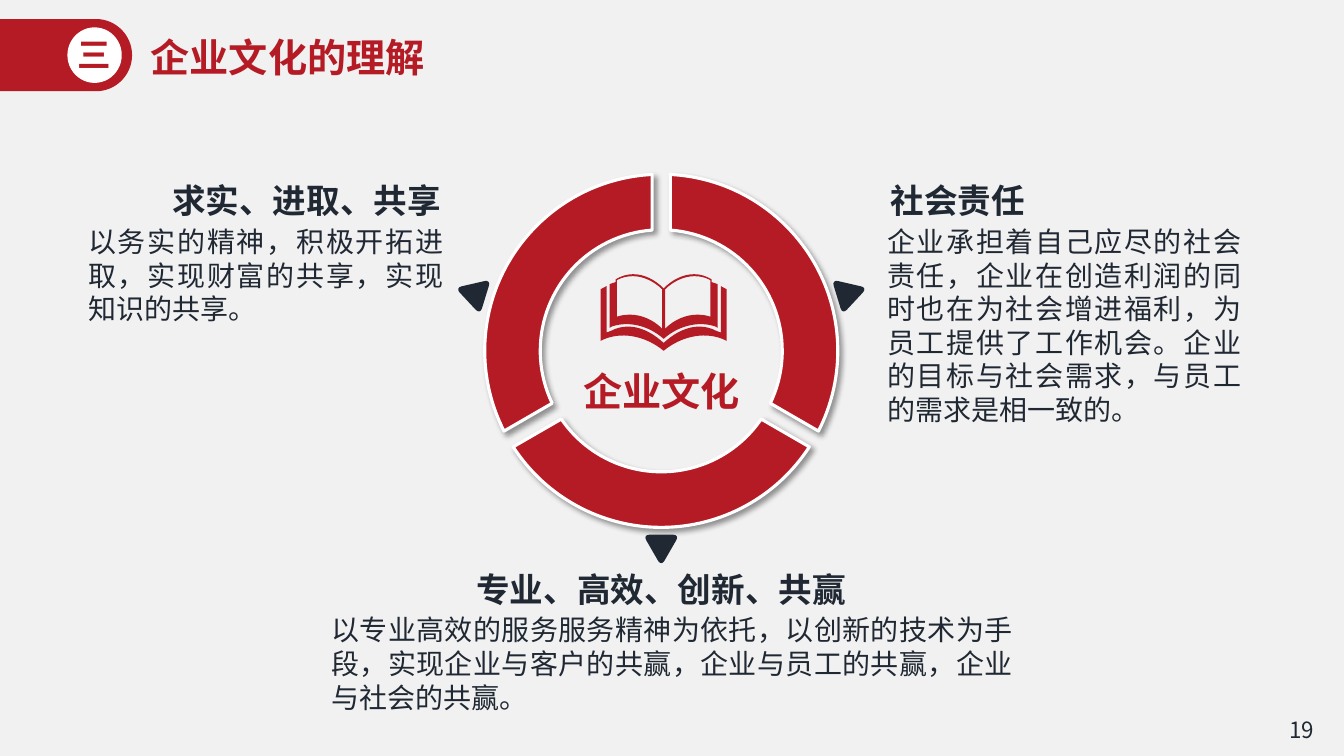
from math import asin, ceil, cos, floor, pi, radians, sin, tan

from lxml import etree
from pptx import Presentation
from pptx.dml.color import RGBColor
from pptx.enum.shapes import MSO_SHAPE
from pptx.enum.text import MSO_AUTO_SIZE, PP_ALIGN
from pptx.oxml.ns import qn
from pptx.util import Cm, Pt

OVAL = MSO_SHAPE.OVAL
GROW = MSO_AUTO_SIZE.SHAPE_TO_FIT_TEXT
LEFT, MID, JUST = PP_ALIGN.LEFT, PP_ALIGN.CENTER, PP_ALIGN.JUSTIFY
FONT = "Noto Sans CJK SC"
HUES = {"page": "F1F1F1", "red": "B51B25", "dark": "202833", "white": "FFFFFF", "shade": "000000"}
HUB = (16.67, 8.84)
OUTER, INNER, GAP = 4.45, 3.05, 0.23

COVER = [(0, 1.93), (0.46, 1.55, 1.09, 1.42, 1.59, 1.68), (1.59, 0.38), (1.44, 0.3),
         (1.44, 1.47), (1.31, 1.42), (1.2, 1.36, 1.05, 1.32, 0.9, 1.32),
         (0.62, 1.32, 0.32, 1.45, 0.06, 1.68), (0, 1.73)]
FRAME = [(0, 1.63), (0.37, 1.3, 0.88, 1.17, 1.31, 1.32), (1.36, 1.35), (1.36, 0.25),
         (1.21, 0.2), (1.21, 0.13), (1.08, 0.05, 0.93, 0, 0.77, 0),
         (0.5, 0, 0.22, 0.13, 0, 0.36)]
LEAF = [(0.04, 0.38), (0.24, 0.18, 0.52, 0.05, 0.77, 0.05),
        (0.93, 0.05, 1.05, 0.08, 1.18, 0.15), (1.18, 1.07),
        (1.08, 1.04, 0.98, 1.02, 0.85, 1.02), (0.57, 1.02, 0.27, 1.14, 0.04, 1.37)]

HEADS = [
    (3.55, 0.71, 9.6, 1.44, "企业文化的理解", 28, "red", LEFT, True),
    (1.7, 0.74, 1.37, 1.27, "三", 24, "red", LEFT, False),
    (14.46, 9.12, 4.5, 1.44, "企业文化", 28, "red", LEFT, False),
    (4.09, 4.41, 7.34, 1.27, "求实、进取、共享", 24, "dark", LEFT, False),
    (22.2, 4.41, 3.94, 1.27, "社会责任", 24, "dark", LEFT, False),
    (11.71, 14.2, 9.91, 1.27, "专业、高效、创新、共赢", 24, "dark", MID, False),
]
NOTES = [
    (1.97, 5.53, 9.46, 2.82, "以务实的精神，积极开拓进取，实现财富的共享，实现知识的共享。",
     20, "dark", JUST, True),
    (22.12, 5.53, 9.42, 5.38, "企业承担着自己应尽的社会责任，企业在创造利润的同时也在为社会增进福利，"
     "为员工提供了工作机会。企业的目标与社会需求，与员工的需求是相一致的。",
     20, "dark", JUST, True),
    (8.1, 15.32, 17.68, 2.82, "以专业高效的服务服务精神为依托，以创新的技术为手段，"
     "实现企业与客户的共赢，企业与员工的共赢，企业与社会的共赢。", 20, "dark", JUST, True),
    (32.18, 17.93, 1.27, 0.94, "19", 16, "dark", MID, False),
]


def tint(name):
    return RGBColor.from_string(HUES[name])


def paint(shape, hue):
    shape.shadow.inherit = False
    shape.fill.solid()
    shape.fill.fore_color.rgb = tint(hue)
    shape.line.fill.background()


def curve(step, mark, shape):
    bend = etree.Element(qn("a:cubicBezTo"))
    for x, y in zip(mark[::2], mark[1::2]):
        etree.SubElement(bend, qn("a:pt"), x=str(Cm(x) - shape.left), y=str(Cm(y) - shape.top))
    step.getparent().replace(step, bend)


def draw(slide, loops, hue):
    ends = [[(Cm(mark[-2]), Cm(mark[-1])) for mark in loop] for loop in loops]
    pen = slide.shapes.build_freeform(*ends[0][0])
    for n, loop in enumerate(ends):
        if n:
            pen.move_to(*loop[0])
        pen.add_line_segments(loop[1:], close=True)
    shape = pen.convert_to_shape()
    steps = list(shape._element.iter(qn("a:lnTo")))
    marks = [mark for loop in loops for mark in loop[1:]]
    for step, mark in zip(steps, marks):
        if len(mark) == 6:
            curve(step, mark, shape)
    paint(shape, hue)
    return shape


def label(slide, x, y, w, h, text, size, hue, align, wrap):
    frame = slide.shapes.add_textbox(Cm(x), Cm(y), Cm(w), Cm(h)).text_frame
    frame.word_wrap = wrap
    frame.auto_size = GROW
    para = frame.paragraphs[0]
    para.text = text
    para.alignment = align
    font = para.font
    font.size, font.bold, font.name = Pt(size), size > 20, FONT
    font.color.rgb = tint(hue)
    base = para._p.pPr.find(qn("a:defRPr"))
    etree.SubElement(base, qn("a:ea"), typeface=FONT)


def polar(hub, size, turn):
    return hub[0] + size * cos(turn), hub[1] + size * sin(turn)


def blend(a, b, share):
    return tuple(p + (q - p) * share for p, q in zip(a, b))


def arc(hub, size, start, end):
    low, high = sorted((start, end))
    quads = range(ceil(low / (pi / 2) + 0.01), floor(high / (pi / 2) - 0.01) + 1)
    turns = sorted([low, high, *(n * pi / 2 for n in quads)], reverse=start > end)
    marks = [polar(hub, size, start)]
    for a, b in zip(turns, turns[1:]):
        pull = size * 4 / 3 * tan((b - a) / 4)
        first = polar(polar(hub, size, a), pull, a + pi / 2)
        last = polar(polar(hub, size, b), pull, b - pi / 2)
        marks.append(first + last + polar(hub, size, b))
    return marks


def shade(shape):
    effects = shape._element.spPr.find(qn("a:effectLst"))
    cast = etree.SubElement(effects, qn("a:outerShdw"), blurRad=str(Pt(4)), dist=str(Pt(3)),
                            dir="2700000", algn="tl", rotWithShape="0")
    color = etree.SubElement(cast, qn("a:srgbClr"), val=HUES["shade"])
    etree.SubElement(color, qn("a:alpha"), val="40000")


def ring(slide):
    far, near = asin(GAP / OUTER), asin(GAP / INNER)
    for start in (150, 30, 270):
        a, b = radians(start), radians(start + 120)
        edge = arc(HUB, OUTER, a + far, b - far) + arc(HUB, INNER, b - near, a + near)
        part = draw(slide, [edge], "red")
        part.line.color.rgb = tint("white")
        part.line.width = Pt(2.25)
        shade(part)


def arrow(slide, angle):
    turn = radians(angle)
    spot = polar(HUB, 4.9, turn)
    tips = [polar(spot, 0.53, turn + n * 2 * pi / 3) for n in range(3)]
    edge = []
    for n, tip in enumerate(tips):
        a, d = (blend(tip, tips[(n + k) % 3], 0.17) for k in (-1, 1))
        b, c = blend(a, tip, 0.55), blend(d, tip, 0.55)
        peak = blend(b, c, 0.5)
        left, right = blend(b, peak, 0.5), blend(c, peak, 0.5)
        ab, cd = blend(a, b, 0.5), blend(c, d, 0.5)
        left, right = blend(ab, peak, 0.5), blend(cd, peak, 0.5)
        edge += [a, ab + left + blend(left, right, 0.5), right + cd + d]
    draw(slide, [edge], "dark")


def flip(marks):
    return [tuple(-v if n % 2 == 0 else v for n, v in enumerate(mark)) for mark in marks]


def back(marks):
    turned = [marks[-1][-2:]]
    for last, mark in zip(marks[-2::-1], marks[:0:-1]):
        turned.append(mark[2:4] + mark[:2] + last[-2:] if len(mark) == 6 else last[-2:])
    return turned


def book(slide):
    base = (16.73, 6.91)
    loops = [half + flip(back(half))[1:] for half in (COVER, FRAME)] + [LEAF, flip(LEAF)]
    draw(slide, [[tuple(v + base[n % 2] for n, v in enumerate(mark)) for mark in loop]
                 for loop in loops], "red")


def badge(slide):
    edge = [(0, 0.48), *arc((2.42, 1.39), 0.91, -pi / 2, pi / 2), (0, 2.3)]
    draw(slide, [edge], "red")
    paint(slide.shapes.add_shape(OVAL, Cm(1.7), Cm(0.69), Cm(1.37), Cm(1.4)), "white")


def main():
    deck = Presentation()
    deck.slide_width, deck.slide_height = Cm(33.88), Cm(19.05)
    slide = deck.slides.add_slide(deck.slide_layouts[6])
    slide.background.fill.solid()
    slide.background.fill.fore_color.rgb = tint("page")
    badge(slide)
    ring(slide)
    for angle in (90, 197, 343):
        arrow(slide, angle)
    for item in HEADS + NOTES:
        label(slide, *item)
    book(slide)
    deck.save("out.pptx")


if __name__ == "__main__":
    main()
